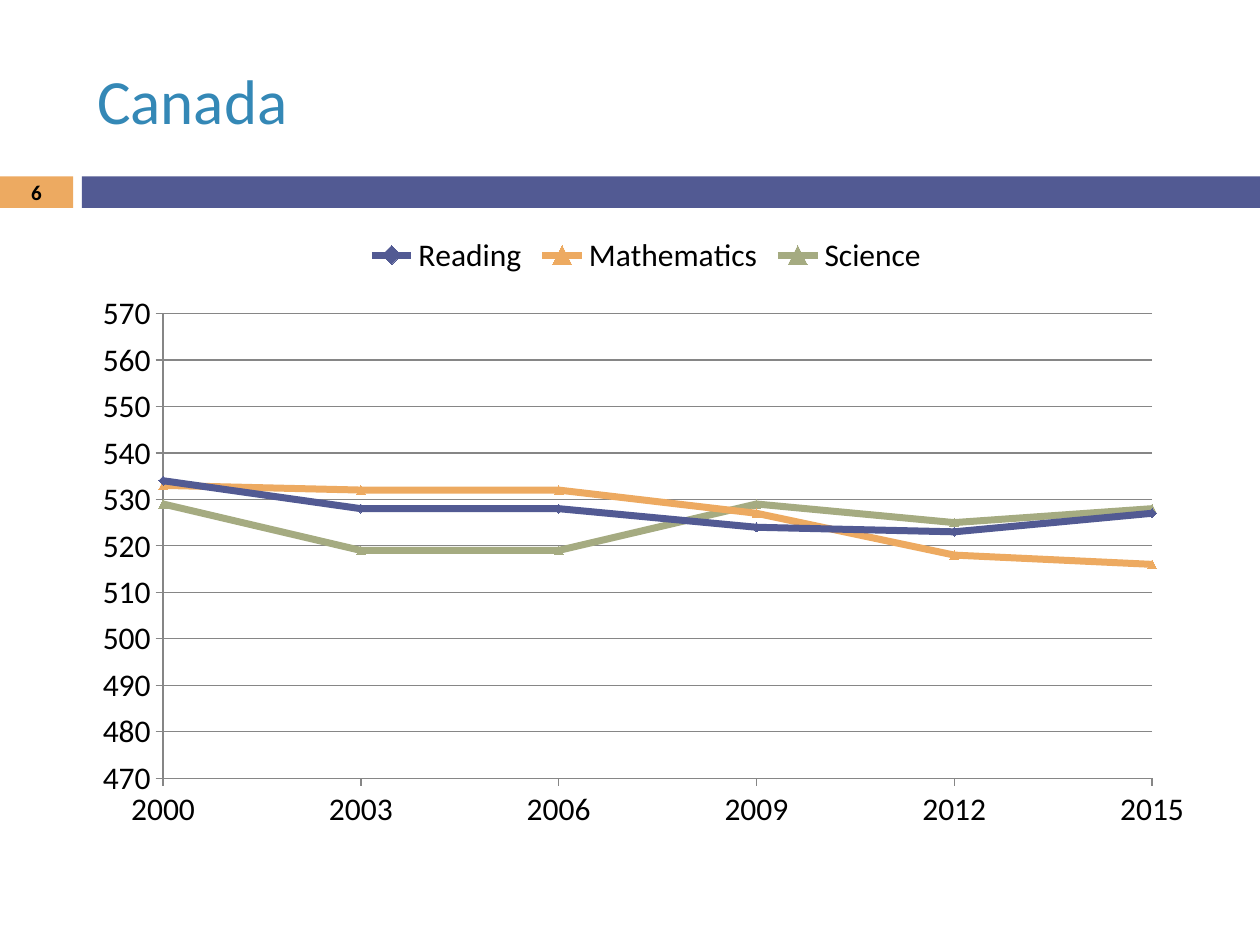
from lxml import etree
from pptx import Presentation
from pptx.chart.data import XyChartData
from pptx.dml.color import RGBColor
from pptx.enum.chart import (XL_CHART_TYPE, XL_LEGEND_POSITION,
                             XL_MARKER_STYLE, XL_TICK_MARK)
from pptx.enum.shapes import MSO_SHAPE
from pptx.enum.text import MSO_ANCHOR, PP_ALIGN
from pptx.oxml.ns import qn
from pptx.util import Inches, Pt

SCATTER_LINES = XL_CHART_TYPE.XY_SCATTER_LINES
LEGEND_TOP = XL_LEGEND_POSITION.TOP
TICK_OUTSIDE, TICK_NONE = XL_TICK_MARK.OUTSIDE, XL_TICK_MARK.NONE
DIAMOND, TRIANGLE = XL_MARKER_STYLE.DIAMOND, XL_MARKER_STYLE.TRIANGLE
RECTANGLE = MSO_SHAPE.RECTANGLE
MIDDLE = MSO_ANCHOR.MIDDLE
LEFT, CENTER = PP_ALIGN.LEFT, PP_ALIGN.CENTER

FONT = "Calibri"
INDIGO = RGBColor(0x52, 0x5A, 0x93)
ORANGE = RGBColor(0xED, 0xAA, 0x61)
SAGE = RGBColor(0xA5, 0xAB, 0x81)
TITLE_BLUE = RGBColor(0x34, 0x88, 0xB6)
GRID_GRAY = RGBColor(0x86, 0x86, 0x86)
BLACK = RGBColor(0, 0, 0)

YEARS = range(2000, 2016, 3)
SCORES = [
    ("Reading", INDIGO, DIAMOND, (534, 528, 528, 524, 523, 527)),
    ("Mathematics", ORANGE, TRIANGLE, (533, 532, 532, 527, 518, 516)),
    ("Science", SAGE, TRIANGLE, (529, 519, 519, 529, 525, 528)),
]
PLOT_AREA = {"x": 0.07, "y": 0.15, "w": 0.88, "h": 0.75}


def style_font(font, size, color, bold=False):
    font.name = FONT
    font.size = Pt(size)
    font.bold = bold
    font.color.rgb = color


def add_title(slide, left, top, width, height):
    title = slide.shapes.title
    title.left, title.top, title.width, title.height = left, top, width, height
    frame = title.text_frame
    frame.text = "Canada"
    frame.vertical_anchor = MIDDLE
    frame.paragraphs[0].alignment = LEFT
    style_font(frame.paragraphs[0].runs[0].font, 36, TITLE_BLUE)


def add_band(slide, left, top, width, height):
    number_width, gap = Inches(0.58), Inches(0.07)
    bar_left = left + number_width + gap
    for x, w, color in ((left, number_width, ORANGE),
                        (bar_left, left + width - bar_left, INDIGO)):
        block = slide.shapes.add_shape(RECTANGLE, x, top, w, height)
        block.shadow.inherit = False
        block.fill.solid()
        block.fill.fore_color.rgb = color
        block.line.fill.background()

    page_number = slide.shapes.add_textbox(left, top, number_width, height)
    frame = page_number.text_frame
    frame.word_wrap = True
    frame.margin_top = frame.margin_bottom = 0
    frame.vertical_anchor = MIDDLE
    frame.text = "6"
    frame.paragraphs[0].alignment = CENTER
    style_font(frame.paragraphs[0].runs[0].font, 12, BLACK, bold=True)


def style_axis(axis, low, high, step, gridlines):
    axis.minimum_scale, axis.maximum_scale = low, high
    axis.major_unit = step
    axis.major_tick_mark, axis.minor_tick_mark = TICK_OUTSIDE, TICK_NONE
    axis.has_major_gridlines = gridlines
    axis.tick_labels.number_format = "General"
    axis.tick_labels.number_format_is_linked = False
    style_font(axis.tick_labels.font, 18, BLACK)
    lines = [axis.format.line]
    if gridlines:
        lines.append(axis.major_gridlines.format.line)
    for line in lines:
        line.color.rgb = GRID_GRAY
        line.width = Pt(0.75)


def place_plot_area(chart):
    plot_area = chart.element.find(".//" + qn("c:plotArea"))
    for old_layout in plot_area.findall(qn("c:layout")):
        plot_area.remove(old_layout)
    layout = etree.Element(qn("c:layout"))
    manual = etree.SubElement(layout, qn("c:manualLayout"))
    settings = [("layoutTarget", "inner"), ("xMode", "edge"), ("yMode", "edge")]
    for tag, value in settings + list(PLOT_AREA.items()):
        etree.SubElement(manual, qn("c:" + tag)).set("val", str(value))
    plot_area.insert(0, layout)


def add_score_chart(slide, left, top, width, height):
    data = XyChartData()
    for name, _, _, scores in SCORES:
        series = data.add_series(name)
        for year, score in zip(YEARS, scores):
            series.add_data_point(year, score)
    chart = slide.shapes.add_chart(
        SCATTER_LINES, left, top, width, height, data).chart
    chart.has_title = False
    style_font(chart.font, 18, BLACK)
    chart.has_legend = True
    chart.legend.position = LEGEND_TOP
    chart.legend.include_in_layout = False
    style_font(chart.legend.font, 18, BLACK)
    style_axis(chart.category_axis, 2000, 2015, 3, False)
    style_axis(chart.value_axis, 470, 570, 10, True)
    place_plot_area(chart)

    plot = chart.plots[0]
    plot.vary_by_categories = False
    for series, (_, color, marker, _) in zip(plot.series, SCORES):
        series.smooth = False
        series.format.line.color.rgb = color
        series.format.line.width = Pt(4)
        series.marker.style = marker
        series.marker.size = 5
        series.marker.format.fill.solid()
        series.marker.format.fill.fore_color.rgb = color
        series.marker.format.line.color.rgb = color


def main():
    deck = Presentation()
    deck.slide_width, deck.slide_height = Inches(10), Inches(7.5)
    slide = deck.slides.add_slide(deck.slide_layouts[5])
    content_left, content_width = Inches(0.67), Inches(8.92)
    add_band(slide, 0, Inches(1.4), deck.slide_width, Inches(0.25))
    add_title(slide, content_left, Inches(0.25), content_width, Inches(1.08))
    add_score_chart(slide, content_left, Inches(1.75), content_width, Inches(4.92))
    deck.save("out.pptx")


if __name__ == "__main__":
    main()
